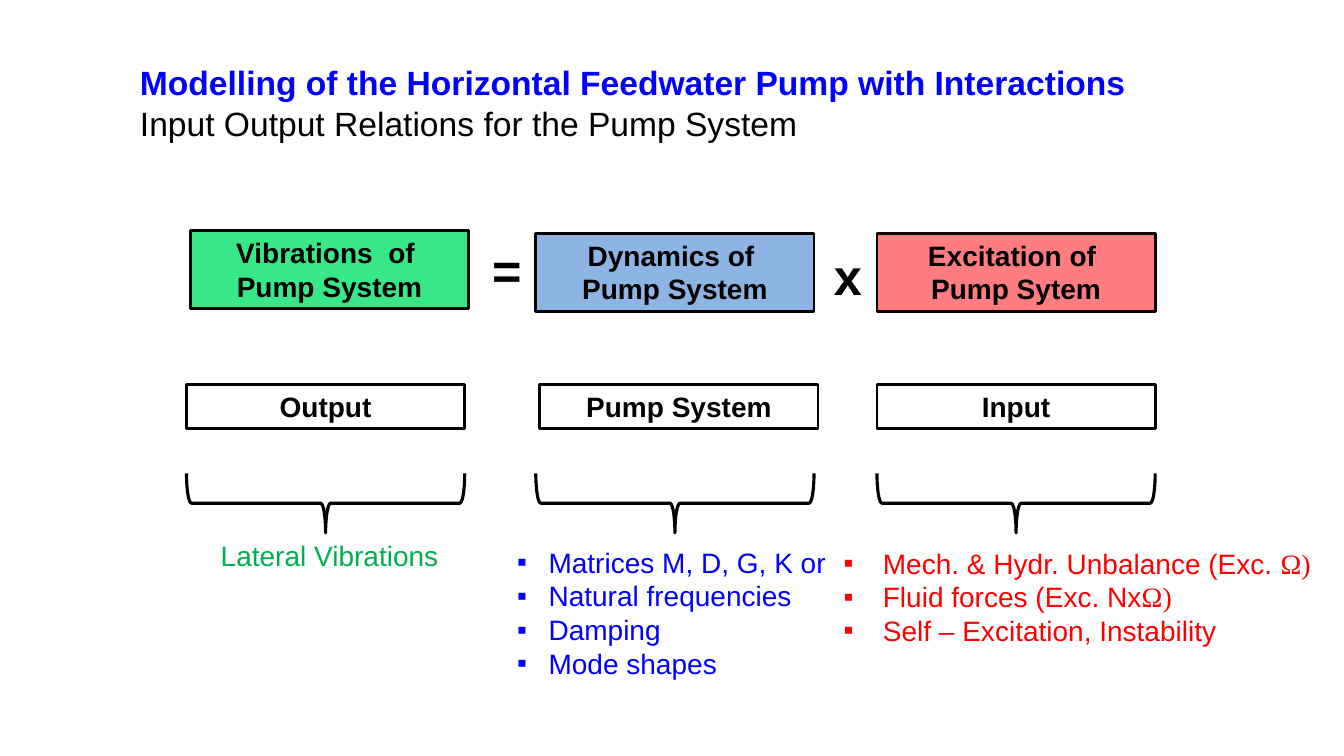
from dataclasses import dataclass

from lxml import etree
from pptx import Presentation
from pptx.dml.color import RGBColor
from pptx.enum.shapes import MSO_SHAPE as Preset
from pptx.enum.text import MSO_ANCHOR as Anchor, PP_ALIGN as Align
from pptx.oxml.ns import qn
from pptx.util import Pt


@dataclass(frozen=True)
class Theme:
    font: str = "Arial"
    greek_font: str = "Times New Roman"
    black: str = "000000"
    blue: str = "0000FF"
    red: str = "FF0000"
    green: str = "00B050"
    output_fill: str = "38E888"
    system_fill: str = "8EB4E3"
    input_fill: str = "FF7C80"
    body: int = 20
    title: int = 24
    operator: int = 36


THEME = Theme()
BOX_WIDTH = 198.75
BRACE_DEPTH = 42.5
BRACE_TOP = 338.2


def style(paragraph, size, color, bold=False, align=Align.LEFT):
    paragraph.alignment = align
    font = paragraph.font
    font.name, font.size, font.bold = THEME.font, Pt(size), bold
    font.color.rgb = RGBColor.from_string(color)


def add_lines(frame, lines):
    """Yield one paragraph per line of text."""
    for number, line in enumerate(lines):
        paragraph = frame.paragraphs[0] if number == 0 else frame.add_paragraph()
        for position, part in enumerate(line.split("|")):
            run = paragraph.add_run()
            run.text = part
            if position:
                run.font.name = THEME.greek_font
        yield paragraph


def add_text(slide, left, top, width, height):
    frame = slide.shapes.add_textbox(Pt(left), Pt(top), Pt(width), Pt(height)).text_frame
    frame.word_wrap = True
    return frame


def add_label(slide, left, top, width, height, text, size, color, bold):
    frame = add_text(slide, left, top, width, height)
    for paragraph in add_lines(frame, [text]):
        style(paragraph, size, color, bold, Align.CENTER)


def add_outline(slide, preset, left, top, width, height, line_width):
    shape = slide.shapes.add_shape(preset, Pt(left), Pt(top), Pt(width), Pt(height))
    shape.shadow.inherit = False
    shape.fill.background()
    shape.line.color.rgb = RGBColor.from_string(THEME.black)
    shape.line.width = Pt(line_width)
    return shape


def add_box(slide, left, top, height, lines, fill=None):
    shape = add_outline(slide, Preset.RECTANGLE, left, top, BOX_WIDTH, height, 2)
    if fill:
        shape.fill.solid()
        shape.fill.fore_color.rgb = RGBColor.from_string(fill)
    frame = shape.text_frame
    frame.word_wrap = True
    frame.vertical_anchor = Anchor.TOP
    for paragraph in add_lines(frame, lines):
        style(paragraph, THEME.body, THEME.black, True, Align.CENTER)


def add_brace(slide, left):
    """Add a brace that opens upwards, as wide as a box."""
    offset = (BOX_WIDTH - BRACE_DEPTH) / 2
    brace = add_outline(slide, Preset.RIGHT_BRACE, left + offset, BRACE_TOP + BRACE_DEPTH / 2 - BOX_WIDTH / 2,
                        BRACE_DEPTH, BOX_WIDTH, 2.25)
    brace.rotation = 90


def add_bullets(slide, left, top, width, height, indent, color, lines):
    frame = add_text(slide, left, top, width, height)
    for paragraph in add_lines(frame, lines):
        properties = paragraph._p.get_or_add_pPr()
        properties.set("marL", str(Pt(indent)))
        properties.set("indent", str(-Pt(indent)))
        etree.SubElement(properties, qn("a:buFont"), typeface=THEME.font)
        etree.SubElement(properties, qn("a:buChar"), char="▪")
        style(paragraph, THEME.body, color)


def add_heading(slide):
    frame = add_text(slide, 92.9, 41, 732, 65.5)
    title, subtitle = add_lines(frame, [
        "Modelling of the Horizontal Feedwater Pump with Interactions",
        "Input Output Relations for the Pump System",
    ])
    style(title, THEME.title, THEME.blue, True)
    style(subtitle, THEME.title, THEME.black)


def main():
    presentation = Presentation()
    presentation.slide_width, presentation.slide_height = Pt(960), Pt(540)
    slide = presentation.slides.add_slide(presentation.slide_layouts[6])
    add_heading(slide)

    terms = [
        (136, 164.7, ["Vibrations  of ", "Pump System"], THEME.output_fill),
        (382.7, 166.6, ["Dynamics of ", "Pump System"], THEME.system_fill),
        (626.4, 166.6, ["Excitation of ", "Pump Sytem"], THEME.input_fill),
    ]
    for left, top, lines, fill in terms:
        add_box(slide, left, top, 55.7, lines, fill)
    for left, top, sign in [(344.5, 167, "="), (588.5, 171.4, "x")]:
        add_label(slide, left, top, 32.4, 51, sign, THEME.operator, THEME.black, True)

    for left, role in [(133.2, "Output"), (385.6, "Pump System"), (626.4, "Input")]:
        add_box(slide, left, 274.7, 31.5, [role])
    for left in (133.2, 382.7, 626.4):
        add_brace(slide, left)

    add_label(slide, 133.2, 381, 204.5, 31.5, "Lateral Vibrations", THEME.body, THEME.green, False)
    add_bullets(slide, 362.2, 386, 245.5, 104, 22.5, THEME.blue, [
        "Matrices M, D, G, K or", "Natural frequencies", "Damping", "Mode shapes",
    ])
    # A bar marks where the Greek font begins.
    add_bullets(slide, 595.6, 386.6, 352, 80, 28, THEME.red, [
        "Mech. & Hydr. Unbalance (Exc. |Ω)", "Fluid forces (Exc. Nx|Ω)", "Self – Excitation, Instability",
    ])
    presentation.save("out.pptx")


if __name__ == "__main__":
    main()
